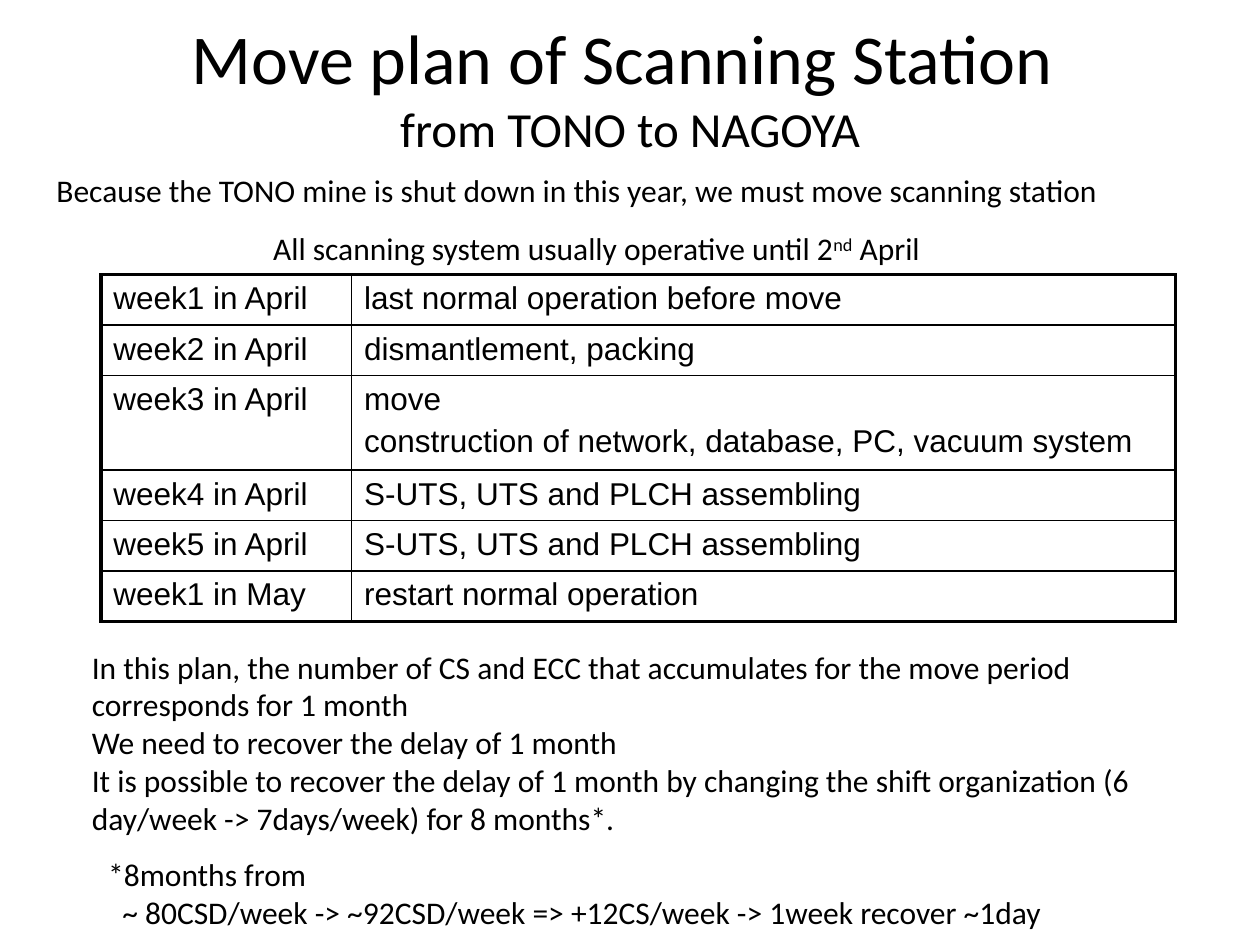
import pptx
import pptx.util
import pptx.dml.color
import pptx.enum.text
import pptx.oxml.ns
import lxml.etree
from dataclasses import dataclass
from pptx.util import Pt


@dataclass(frozen=True)
class Theme:
    ink: pptx.dml.color.RGBColor = pptx.dml.color.RGBColor(0, 0, 0)
    prose_font: str = "Calibri"
    table_font: str = "Arial"
    title_size: float = 40
    subtitle_size: float = 28
    body_size: float = 18
    frame_width: float = 2.25
    grid_width: float = 1


THEME = Theme()

SCHEDULE = [
    ("week1 in April", "last normal operation before move"),
    ("week2 in April", "dismantlement, packing"),
    ("week3 in April", "move\nconstruction of network, database, PC, vacuum system"),
    ("week4 in April", "S-UTS, UTS and PLCH assembling"),
    ("week5 in April", "S-UTS, UTS and PLCH assembling"),
    ("week1 in May", "restart normal operation"),
]
RECOVERY = [
    "In this plan, the number of CS and ECC that accumulates for the move period "
    "corresponds for 1 month",
    "We need to recover the delay of 1 month",
    "It is possible to recover the delay of 1 month by changing the shift organization "
    "(6 day/week -> 7days/week) for 8 months*.",
]
FOOTNOTE = [
    "*8months from",
    "~ 80CSD/week -> ~92CSD/week => +12CS/week -> 1week recover ~1day",
]


def format_run(run, font, size):
    run.font.name = font
    run.font.size = Pt(size)
    run.font.color.rgb = THEME.ink


def place_title(slide, left, top, width, height):
    title = slide.shapes.title
    title.left, title.top, title.width, title.height = map(Pt, (left, top, width, height))
    frame = title.text_frame
    frame.auto_size = pptx.enum.text.MSO_AUTO_SIZE.NONE
    frame.vertical_anchor = pptx.enum.text.MSO_ANCHOR.MIDDLE
    frame.text = "Move plan of Scanning Station \vfrom TONO to NAGOYA"
    heading = frame.paragraphs[0]
    heading.alignment = pptx.enum.text.PP_ALIGN.CENTER
    for run, size in zip(heading.runs, (THEME.title_size, THEME.subtitle_size)):
        format_run(run, THEME.prose_font, size)


def place_prose(slide, left, top, width, height, lines, wrap=True):
    prose = slide.shapes.add_textbox(Pt(left), Pt(top), Pt(width), Pt(height)).text_frame
    prose.word_wrap = wrap
    prose.auto_size = pptx.enum.text.MSO_AUTO_SIZE.SHAPE_TO_FIT_TEXT
    prose.text = "\n".join(lines)
    for paragraph in prose.paragraphs:
        for run in paragraph.runs:
            format_run(run, THEME.prose_font, THEME.body_size)
    return prose


def place_caption(slide, left, top, width, height):
    caption = place_prose(slide, left, top, width, height,
                          ["All scanning system usually operative until 2"], wrap=False)
    for wording in ("nd", " April"):
        run = caption.paragraphs[0].add_run()
        run.text = wording
        format_run(run, THEME.prose_font, THEME.body_size)
    caption.paragraphs[0].runs[1].font._element.set("baseline", "30000")


def place_footnote(slide, left, top, width, height):
    footnote = place_prose(slide, left, top, width, height, FOOTNOTE, wrap=False)
    estimate = footnote.paragraphs[1]._p.get_or_add_pPr()
    estimate.set("marL", str(Pt(8.14)))
    estimate.set("indent", "0")


def draw_border(cell, side, width):
    qn = pptx.oxml.ns.qn
    border = lxml.etree.SubElement(cell._tc.get_or_add_tcPr(), qn(f"a:ln{side}"), w=str(Pt(width)))
    fill = lxml.etree.SubElement(border, qn("a:solidFill"))
    lxml.etree.SubElement(fill, qn("a:srgbClr"), val=str(THEME.ink))


def place_schedule(slide, left, top, width, week_width, row_height, extra_line):
    line_counts = [task.count("\n") + 1 for _, task in SCHEDULE]
    heights = [row_height + extra_line * (count - 1) for count in line_counts]
    schedule = slide.shapes.add_table(len(SCHEDULE), 2, Pt(left), Pt(top),
                                      Pt(width), Pt(sum(heights))).table
    schedule.first_row = schedule.horz_banding = False
    schedule.columns[0].width = Pt(week_width)
    schedule.columns[1].width = Pt(width - week_width)
    last_row = len(SCHEDULE) - 1
    for row, entry in enumerate(SCHEDULE):
        schedule.rows[row].height = Pt(heights[row])
        for column, wording in enumerate(entry):
            cell = schedule.cell(row, column)
            outer_sides = {"L": column == 0, "R": column == 1,
                           "T": row == 0, "B": row == last_row}
            for side, is_outer in outer_sides.items():
                draw_border(cell, side, THEME.frame_width if is_outer else THEME.grid_width)
            cell.fill.background()
            cell.text_frame.text = wording
            for index, paragraph in enumerate(cell.text_frame.paragraphs):
                if index:
                    paragraph.space_before = Pt(THEME.body_size * 0.2)
                for run in paragraph.runs:
                    format_run(run, THEME.table_font, THEME.body_size)


def main():
    presentation = pptx.Presentation()
    presentation.slide_width, presentation.slide_height = Pt(720), Pt(540)
    slide = presentation.slides.add_slide(presentation.slide_layouts[5])
    place_title(slide, 36, 4.3, 648, 90)
    place_caption(slide, 149, 127.4, 420.5, 28.8)
    place_prose(slide, 45.4, 366.5, 643.7, 115.2, RECOVERY)
    place_schedule(slide, 57.6, 157, 614.2, 143.3, 28.8, 25)
    place_prose(slide, 25.2, 94.3, 686.2, 28.8,
                ["Because the TONO mine is shut down in this year, we must move scanning station"])
    place_footnote(slide, 54.7, 485.3, 618.5, 50.4)
    presentation.save("out.pptx")


if __name__ == "__main__":
    main()
